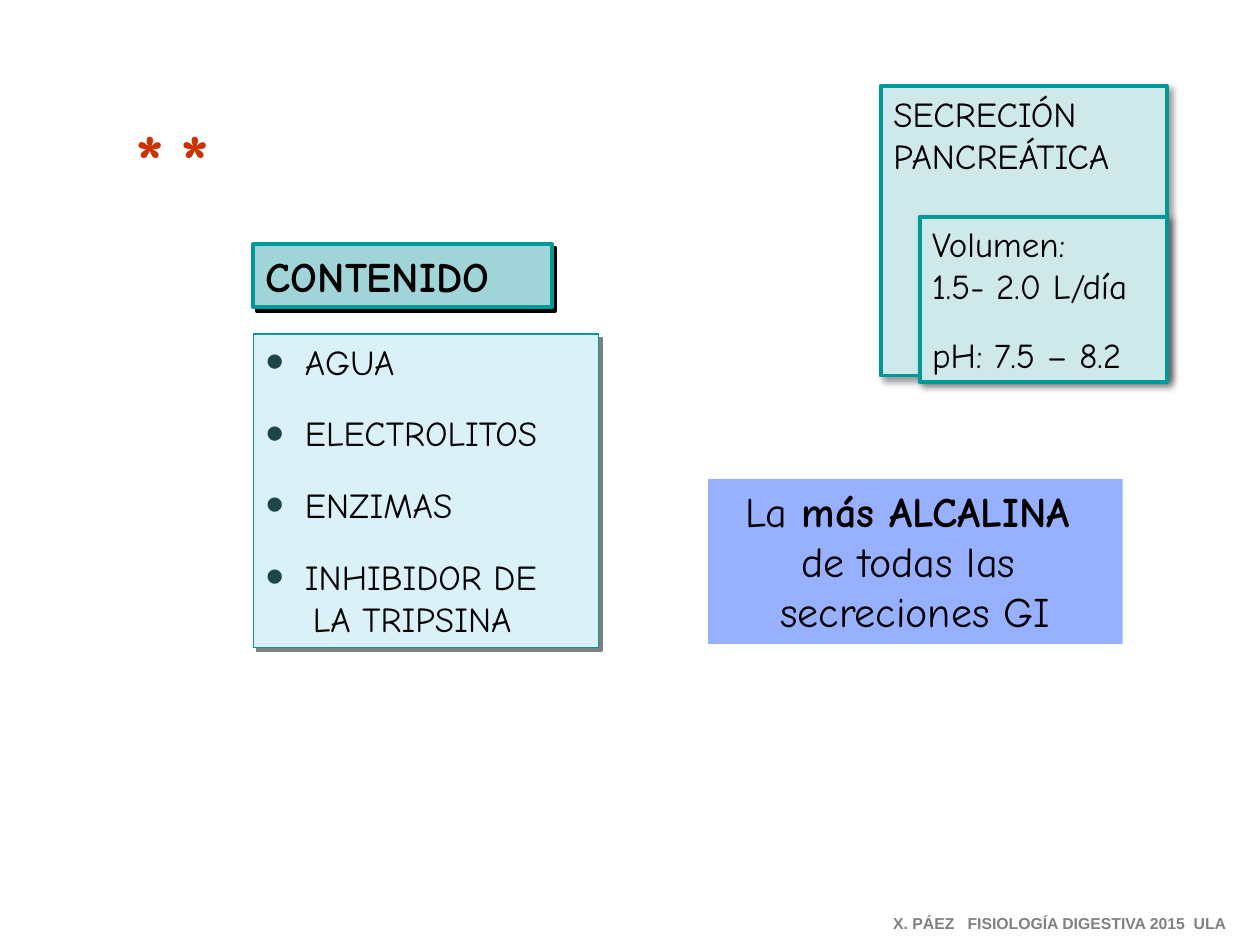
from lxml import etree
from pptx import Presentation
from pptx.dml.color import RGBColor
from pptx.enum.shapes import MSO_SHAPE
from pptx.enum.text import MSO_ANCHOR, MSO_AUTO_SIZE, PP_ALIGN
from pptx.oxml.ns import qn
from pptx.util import Pt

RECT = MSO_SHAPE.RECTANGLE
TOP, GROW = MSO_ANCHOR.TOP, MSO_AUTO_SIZE.SHAPE_TO_FIT_TEXT
LEFT, CENTER = PP_ALIGN.LEFT, PP_ALIGN.CENTER
FONT = "Comic Neue"
COLORS = {
    "black": "000000", "gray": "808080", "red": "CC3300", "teal": "009999",
    "bullet": "1E4649", "list": "D9F1F7", "heading": "A0D4D8",
    "panel": "CFE9EB", "blue": "97B0FF",
}


def add_shadow(effects, color, alpha=100, blur=0, dist=2.8):
    shadow = etree.SubElement(effects, qn("a:outerShdw"), blurRad=str(Pt(blur)),
                              dist=str(Pt(dist)), dir="2700000", algn="ctr", rotWithShape="0")
    clr = etree.SubElement(shadow, qn("a:srgbClr"), val=COLORS[color])
    etree.SubElement(clr, qn("a:alpha"), val=str(alpha * 1000))


def style(sp, box, lines, size, color="black", bold=False, font=FONT, align=LEFT,
          wrap=False, fill=None, line=None, shadow=None):
    sp.left, sp.top, sp.width, sp.height = [Pt(v) for v in box]
    if fill:
        sp.fill.solid()
        sp.fill.fore_color.rgb = RGBColor.from_string(COLORS[fill])
        if line:
            sp.line.color.rgb = RGBColor.from_string(COLORS["teal"])
            sp.line.width = Pt(line)
        else:
            sp.line.fill.background()
        sp.shadow.inherit = False
        if shadow:
            add_shadow(sp._element.spPr.find(qn("a:effectLst")), *shadow)
    tf = sp.text_frame
    tf.text = "\n".join(lines)
    tf.word_wrap, tf.auto_size, tf.vertical_anchor = wrap, GROW, TOP
    for p in tf.paragraphs:
        p.alignment = align
        for r in p.runs:
            r.font.size, r.font.bold, r.font.name = Pt(size), bold, font
            r.font.color.rgb = RGBColor.from_string(COLORS[color])
    return tf


prs = Presentation()
prs.slide_width, prs.slide_height = Pt(720), Pt(540)
s = prs.slides.add_slide(prs.slide_layouts[5])
shapes = s.shapes
soft = ("black", 40, 4, 3)

# Title
style(shapes.title, (503.3, 49, 163.4, 55.4), ["SECRECIÓN", "PANCREÁTICA"], 20,
      wrap=True, fill="panel", line=2.25, shadow=soft)

# Contents list
sp = shapes.add_shape(RECT, 0, 0, 0, 0)
tf = style(sp, (144.7, 190.8, 197.3, 179.3),
           ["AGUA", "ELECTROLITOS", "ENZIMAS", "INHIBIDOR DE", "LA TRIPSINA"], 20,
           fill="list", line=0.75, shadow=("gray",))
*items, last = tf.paragraphs
for i, p in enumerate(items):
    p.space_before = Pt(17 if i else 0)
    pPr = p._p.get_or_add_pPr()
    pPr.set("marL", str(Pt(22.5)))
    pPr.set("indent", str(Pt(-22.5)))
    clr = etree.SubElement(pPr, qn("a:buClr"))
    etree.SubElement(clr, qn("a:srgbClr"), val=COLORS["bullet"])
    etree.SubElement(pPr, qn("a:buSzPct"), val="150000")
    etree.SubElement(pPr, qn("a:buFont"), typeface="Arial")
    etree.SubElement(pPr, qn("a:buChar"), char="•")
last._p.get_or_add_pPr().set("marL", str(Pt(27)))

# Contents heading
sp = shapes.add_shape(RECT, 0, 0, 0, 0)
style(sp, (144.7, 139.7, 170.6, 36), ["CONTENIDO"], 24, bold=True,
      fill="heading", line=2.25, shadow=("black",))

# Asterisks with shadowed text
for x in (70.6, 95.8):
    sp = shapes.add_textbox(0, 0, 0, 0)
    tf = style(sp, (x, 60.5, 37.4, 59.8), ["*"], 44, "red", True)
    rPr = tf.paragraphs[0].runs[0]._r.get_or_add_rPr()
    effects = etree.Element(qn("a:effectLst"))
    rPr.find(qn("a:solidFill")).addnext(effects)
    add_shadow(effects, "black")

# Alkalinity note
sp = shapes.add_shape(RECT, 0, 0, 0, 0)
tf = style(sp, (404.6, 273.6, 236.9, 94.3), ["La ", "de todas las ", "secreciones GI"], 24,
           align=CENTER, fill="blue")
r = tf.paragraphs[0].add_run()
r.text = "más ALCALINA "
r.font.size, r.font.bold, r.font.name = Pt(24), True, FONT
r.font.color.rgb = RGBColor.from_string(COLORS["black"])

# Volume and pH
sp = shapes.add_shape(RECT, 0, 0, 0, 0)
tf = style(sp, (525.6, 123.8, 141.1, 94.3), ["Volumen:", "1.5- 2.0 L/día", "pH: 7.5 – 8.2"], 20,
           fill="panel", line=2.25, shadow=soft)
tf.paragraphs[2].space_before = Pt(15)

# Credit line
sp = shapes.add_textbox(0, 0, 0, 0)
style(sp, (503.3, 518.4, 213.1, 18), ["X. PÁEZ   FISIOLOGÍA DIGESTIVA 2015  ULA"], 9,
      "gray", True, "Arial")

prs.save("out.pptx")
